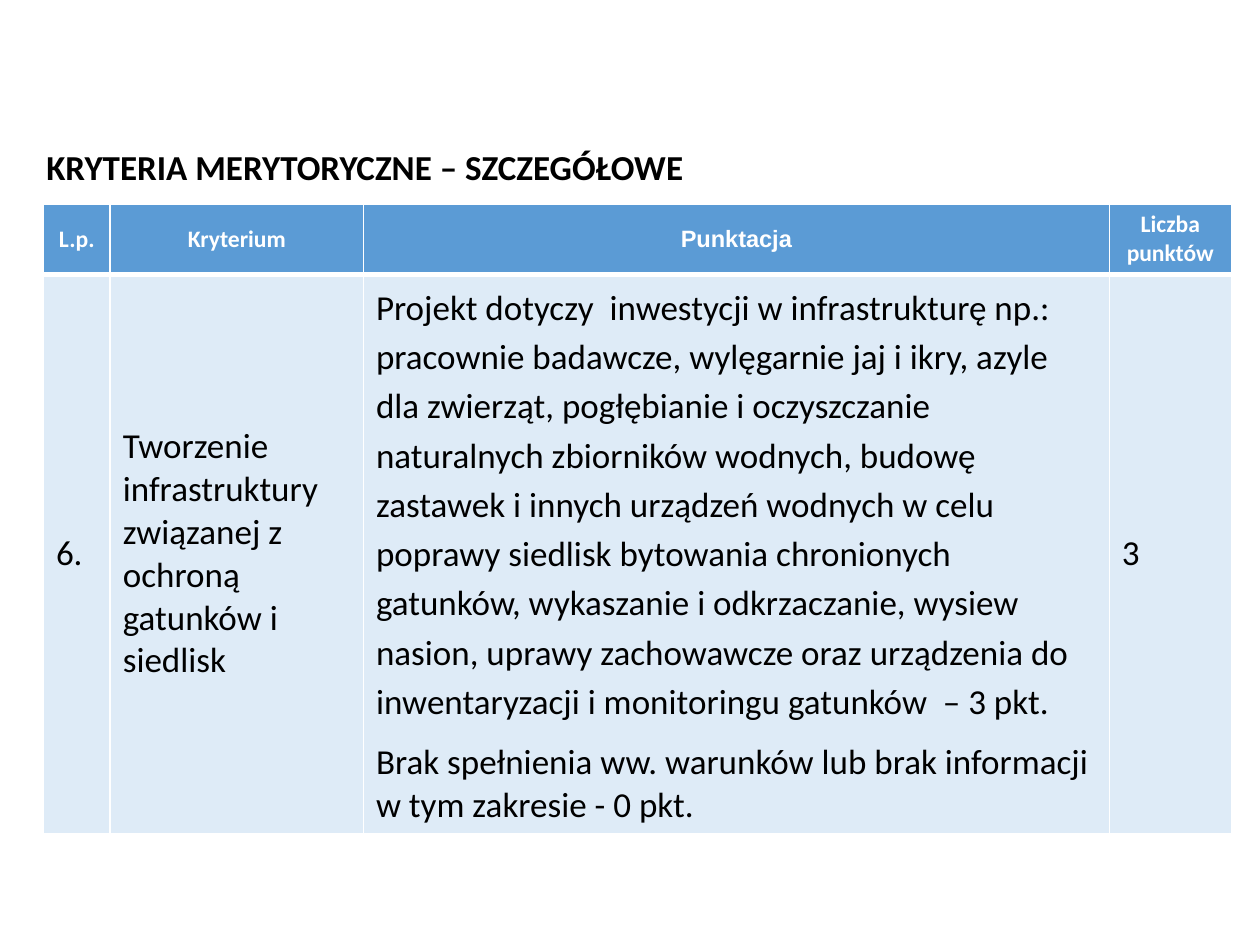
from lxml import etree
from pptx import Presentation
from pptx.dml.color import RGBColor
from pptx.enum import text
from pptx.oxml import ns
from pptx.util import Pt

WHITE = RGBColor(0xFF, 0xFF, 0xFF)
BLACK = RGBColor(0, 0, 0)
HEADER_BLUE = RGBColor(0x5B, 0x9B, 0xD5)
BODY_BLUE = RGBColor(0xDE, 0xEB, 0xF7)

COLUMN_WIDTHS = (38.2, 144.7, 426.2, 69.8)
ROW_HEIGHTS = (26.6, 295.2)
HEADINGS = (("L.p.", "Calibri"), ("Kryterium", "Calibri"),
            ("Punktacja", "Arial"), ("Liczba punktów", "Calibri"))
CRITERION = (
    "6.",
    "Tworzenie infrastruktury związanej z ochroną gatunków i siedlisk",
    "Projekt dotyczy  inwestycji w infrastrukturę np.: pracownie badawcze, "
    "wylęgarnie jaj i ikry, azyle dla zwierząt, pogłębianie i oczyszczanie "
    "naturalnych zbiorników wodnych, budowę zastawek i innych urządzeń wodnych "
    "w celu poprawy siedlisk bytowania chronionych gatunków, wykaszanie i "
    "odkrzaczanie, wysiew nasion, uprawy zachowawcze oraz urządzenia do "
    "inwentaryzacji i monitoringu gatunków  – 3 pkt.\n"
    "Brak spełnienia ww. warunków lub brak informacji w tym zakresie - 0 pkt.",
    "3",
)


def format_runs(frame, size, color, bold, font="Calibri"):
    for paragraph in frame.paragraphs:
        for run in paragraph.runs:
            run.font.name = font
            run.font.size = Pt(size)
            run.font.bold = bold
            run.font.color.rgb = color


def set_borders(cell, bottom):
    """Draw white cell borders; bottom is the width of the lower one."""
    properties = cell._tc.get_or_add_tcPr()
    widths = (("lnL", 1), ("lnR", 1), ("lnT", 1), ("lnB", bottom))
    for position, (side, width) in enumerate(widths):
        line = etree.Element(ns.qn("a:" + side), w=str(Pt(width)))
        fill = etree.SubElement(line, ns.qn("a:solidFill"))
        etree.SubElement(fill, ns.qn("a:srgbClr"), val=str(WHITE))
        properties.insert(position, line)


def fill_cell(cell, content, background, bottom):
    cell.text_frame.text = content
    cell.vertical_anchor = text.MSO_ANCHOR.MIDDLE
    cell.fill.solid()
    cell.fill.fore_color.rgb = background
    set_borders(cell, bottom)


def add_title(slide):
    title = slide.shapes.add_textbox(Pt(19.4), Pt(79.2), Pt(381.6), Pt(31.5))
    frame = title.text_frame
    frame.text = "KRYTERIA MERYTORYCZNE – SZCZEGÓŁOWE"
    frame.word_wrap = False
    frame.auto_size = text.MSO_AUTO_SIZE.SHAPE_TO_FIT_TEXT
    frame.vertical_anchor = text.MSO_ANCHOR.MIDDLE
    format_runs(frame, 20, BLACK, True)


def add_criteria_table(slide):
    criteria = slide.shapes.add_table(
        len(ROW_HEIGHTS), len(COLUMN_WIDTHS), Pt(24.8), Pt(116.6),
        Pt(sum(COLUMN_WIDTHS)), Pt(sum(ROW_HEIGHTS))).table
    for column, width in zip(criteria.columns, COLUMN_WIDTHS):
        column.width = Pt(width)
    for row, height in zip(criteria.rows, ROW_HEIGHTS):
        row.height = Pt(height)

    for index, (heading, font) in enumerate(HEADINGS):
        cell = criteria.cell(0, index)
        fill_cell(cell, heading, HEADER_BLUE, bottom=3)
        cell.text_frame.paragraphs[0].alignment = text.PP_ALIGN.CENTER
        format_runs(cell.text_frame, 13.5, WHITE, True, font)

    for index, content in enumerate(CRITERION):
        cell = criteria.cell(1, index)
        fill_cell(cell, content, BODY_BLUE, bottom=1)
        format_runs(cell.text_frame, 20, BLACK, False)

    scoring = criteria.cell(1, 2).text_frame.paragraphs[0]
    scoring.line_spacing = 1.15
    scoring.space_after = Pt(10)


def main():
    presentation = Presentation()
    presentation.slide_width = Pt(720)
    presentation.slide_height = Pt(540)
    slide = presentation.slides.add_slide(presentation.slide_layouts[6])
    add_criteria_table(slide)
    add_title(slide)
    presentation.save("out.pptx")


if __name__ == "__main__":
    main()
